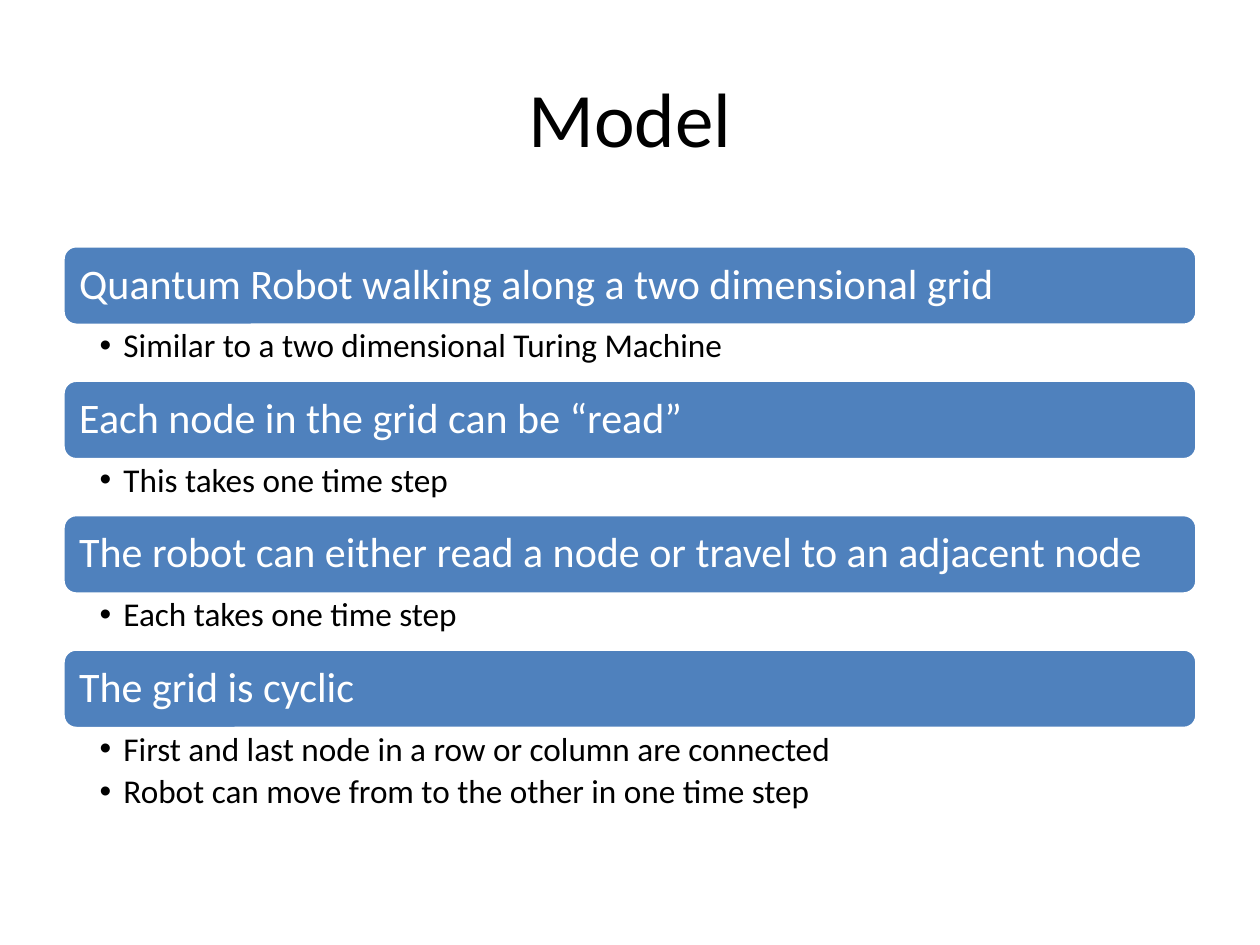
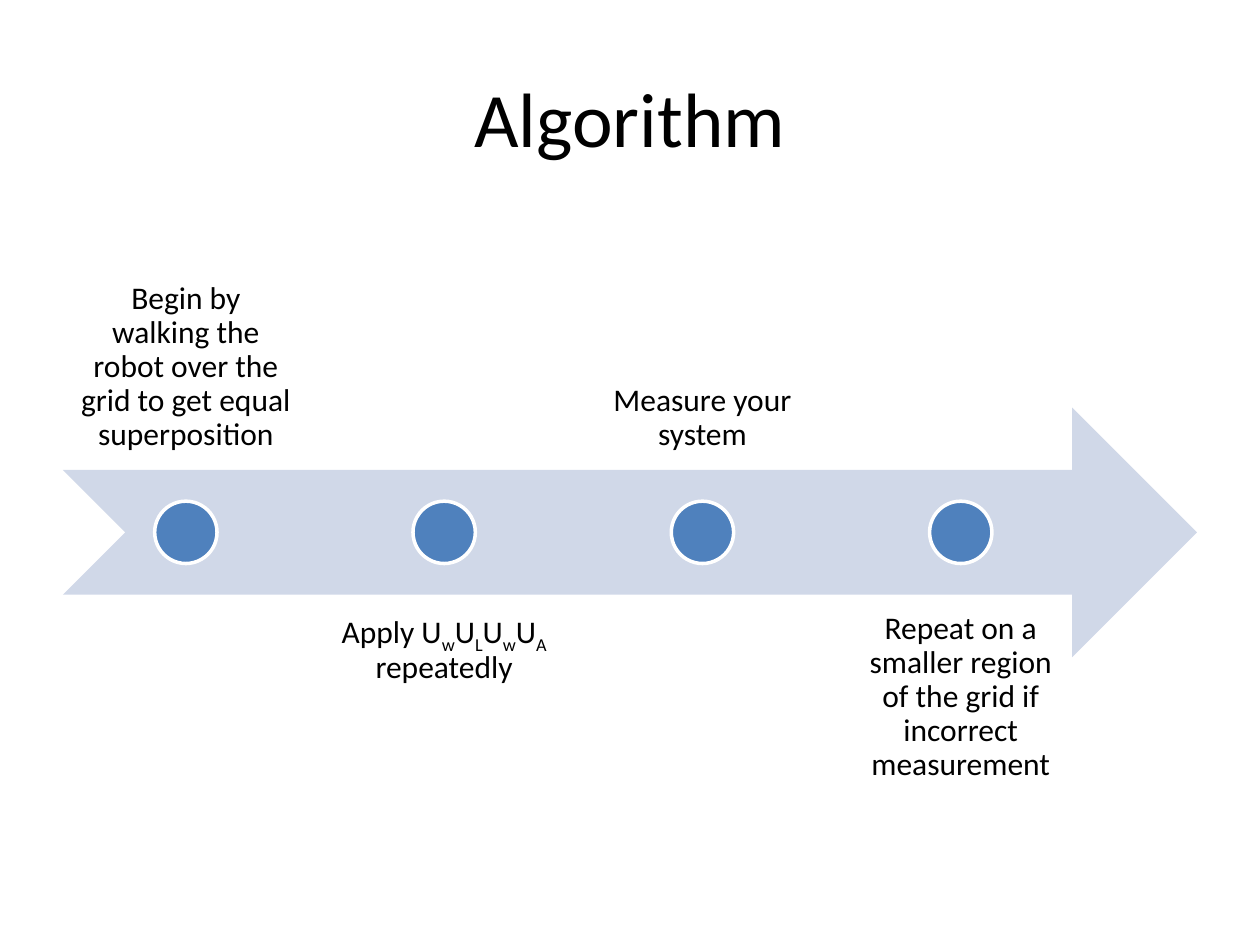
from collections import namedtuple

from lxml.etree import SubElement
from pptx import Presentation
from pptx.dml.color import RGBColor
from pptx.enum.shapes import MSO_SHAPE
from pptx.enum.text import MSO_ANCHOR, PP_ALIGN
from pptx.oxml.ns import qn
from pptx.util import Inches, Pt

Box = namedtuple("Box", "left top width height")

FONT = "Calibri"
BLUE, PALE_BLUE, WHITE, BLACK = "4F81BD", "D0D8E8", "FFFFFF", "000000"
TITLE_BOX = Box(0.5, 0.3, 9, 1.25)
BODY_BOX = Box(0.5, 1.75, 9, 4.95)

MODEL = [
    ("Quantum Robot walking along a two dimensional grid",
     ["Similar to a two dimensional Turing Machine"]),
    ("Each node in the grid can be “read”", ["This takes one time step"]),
    ("The robot can either read a node or travel to an adjacent node",
     ["Each takes one time step"]),
    ("The grid is cyclic",
     ["First and last node in a row or column are connected",
      "Robot can move from to the other in one time step"]),
]

# Each step is a list of runs; a run starting with "_" is a subscript
STEPS = [
    ["Begin by walking the robot over the grid to get equal superposition"],
    ["Apply U", "_w", "U", "_L", "U", "_w", "U", "_A", " repeatedly"],
    ["Measure your system"],
    ["Repeat on a smaller region of the grid if incorrect measurement"],
]


def color(hex_string):
    return RGBColor.from_string(hex_string)


def part_of(box, left, top, width, height):
    """Box given in percent of another box."""
    return Box(box.left + box.width * left / 100, box.top + box.height * top / 100,
               box.width * width / 100, box.height * height / 100)


def inches(box):
    return [Inches(length) for length in box]


def set_frame(shape, insets, anchor):
    frame = shape.text_frame
    frame.word_wrap = True
    frame.vertical_anchor = anchor
    (frame.margin_left, frame.margin_top,
     frame.margin_right, frame.margin_bottom) = [Inches(inset) for inset in insets]
    return frame


def add_shape(slide, kind, box, fill, outline=None):
    shape = slide.shapes.add_shape(kind, *inches(box))
    shape.shadow.inherit = False
    shape.fill.solid()
    shape.fill.fore_color.rgb = color(fill)
    if outline:
        shape.line.color.rgb = color(outline)
        shape.line.width = Pt(2)
    else:
        shape.line.fill.background()
    return shape


def add_text_box(slide, box, insets, anchor=MSO_ANCHOR.TOP):
    return set_frame(slide.shapes.add_textbox(*inches(box)), insets, anchor)


def format_paragraph(paragraph, space_after, alignment=PP_ALIGN.LEFT):
    paragraph.alignment = alignment
    paragraph.line_spacing = 0.9
    paragraph.space_after = Pt(space_after)


def add_run(paragraph, text, size, text_color=BLACK):
    run = paragraph.add_run()
    run.text = text
    run.font.name = FONT
    run.font.size = Pt(size)
    run.font.color.rgb = color(text_color)
    return run


def add_bullet(paragraph):
    properties = paragraph._p.get_or_add_pPr()
    properties.set("marL", str(Inches(0.19)))
    properties.set("indent", str(-Inches(0.19)))
    SubElement(properties, qn("a:buFont"), typeface="Arial")
    SubElement(properties, qn("a:buChar"), char="•")


def add_titled_slide(presentation, title):
    slide = presentation.slides.add_slide(presentation.slide_layouts[6])
    frame = add_text_box(slide, TITLE_BOX, (0.1, 0.05, 0.1, 0.05), MSO_ANCHOR.MIDDLE)
    paragraph = frame.paragraphs[0]
    paragraph.alignment = PP_ALIGN.CENTER
    add_run(paragraph, title, 44)
    return slide


def add_bar_list(slide, box, sections):
    """Stack of heading bars with bullets, centred in the box."""
    bar_height = 12.75
    detail_heights = {1: 8.8, 2: 14.5}
    total = sum(bar_height + detail_heights[len(details)] for _, details in sections)
    top = (100 - total) / 2
    for heading, details in sections:
        # Heading bar
        bar = add_shape(slide, MSO_SHAPE.ROUNDED_RECTANGLE,
                        part_of(box, 0, top, 100, bar_height), BLUE, WHITE)
        paragraph = set_frame(bar, [0.1] * 4, MSO_ANCHOR.MIDDLE).paragraphs[0]
        format_paragraph(paragraph, 8.4)
        add_run(paragraph, heading, 24, WHITE)
        top += bar_height

        # Bullets under the bar
        height = detail_heights[len(details)]
        frame = add_text_box(slide, part_of(box, 0, top, 100, height),
                             (0.29, 0.03, 0.19, 0.03))
        for index, detail in enumerate(details):
            paragraph = frame.add_paragraph() if index else frame.paragraphs[0]
            format_paragraph(paragraph, 3.8)
            add_bullet(paragraph)
            add_run(paragraph, detail, 19)
        top += height


def add_timeline(slide, box, steps):
    """Arrow with evenly spaced dots, labels alternating above and below."""
    add_shape(slide, MSO_SHAPE.NOTCHED_RIGHT_ARROW, part_of(box, 0, 30, 100, 40), PALE_BLUE)
    gap = 0.1
    diameter = box.height / 10
    column_width = (box.width * 0.9 - gap * (len(steps) - 1)) / len(steps)
    for index, runs in enumerate(steps):
        column = Box(box.left + index * (column_width + gap), box.top,
                     column_width, box.height)

        # Label
        top, anchor = (60, MSO_ANCHOR.TOP) if index % 2 else (0, MSO_ANCHOR.BOTTOM)
        frame = add_text_box(slide, part_of(column, 0, top, 100, 40), [0.14] * 4, anchor)
        paragraph = frame.paragraphs[0]
        format_paragraph(paragraph, 6.3, PP_ALIGN.CENTER)
        for text in runs:
            run = add_run(paragraph, text.removeprefix("_"), 18)
            if text.startswith("_"):
                run.font._rPr.set("baseline", "-25000")

        # Dot
        dot = Box(column.left + (column_width - diameter) / 2,
                  box.top + (box.height - diameter) / 2, diameter, diameter)
        add_shape(slide, MSO_SHAPE.OVAL, dot, BLUE, WHITE)


def main():
    presentation = Presentation()
    presentation.slide_width = Inches(10)
    presentation.slide_height = Inches(7.5)
    add_bar_list(add_titled_slide(presentation, "Model"), BODY_BOX, MODEL)
    add_timeline(add_titled_slide(presentation, "Algorithm"), BODY_BOX, STEPS)
    presentation.save("out.pptx")


if __name__ == "__main__":
    main()
